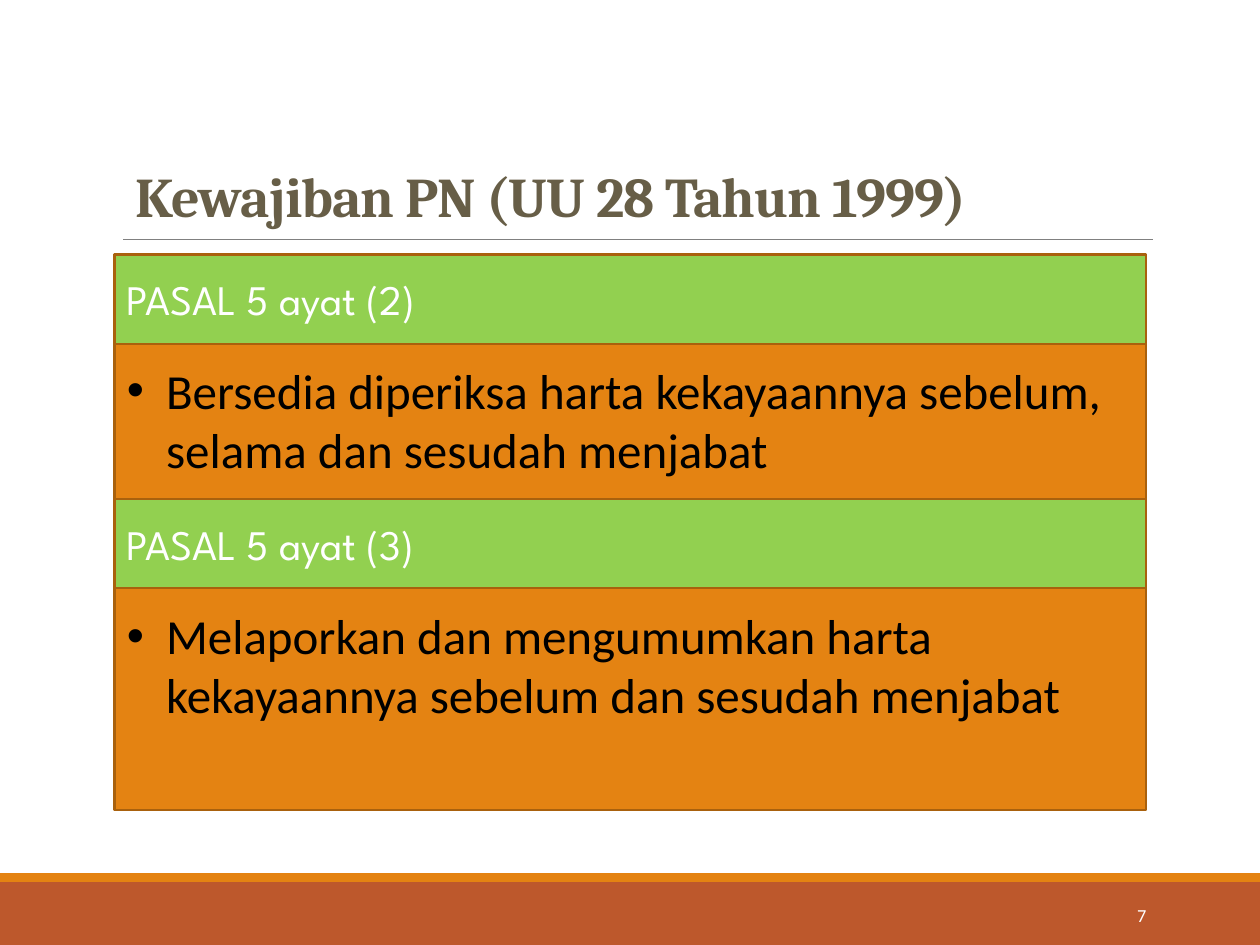
from lxml.etree import SubElement
from pptx import Presentation
from pptx.dml.color import RGBColor
from pptx.enum.shapes import MSO_CONNECTOR, MSO_SHAPE
from pptx.enum.text import MSO_ANCHOR, PP_ALIGN
from pptx.oxml.ns import qn
from pptx.util import Cm, Pt

LEFT, WIDE = 2.31, 20.8
GREEN, ORANGE, RUST, BROWN = "92D050", "E48312", "BD582C", "A9610D"
HEAD = {"name": "League Spartan", "size": Pt(24)}
BODY = {"name": "Calibri", "size": Pt(28)}
TITLE = {"name": "Cambria", "size": Pt(32), "bold": True}
PAGE = {"name": "Calibri", "size": Pt(10.5)}


def paint(item, tone):
    item.rgb = RGBColor.from_string(tone)


def apply(item, values):
    for name, value in values.items():
        setattr(item, name, value)


def add_bar(slide, box, tone, edge=None):
    bar = slide.shapes.add_shape(MSO_SHAPE.RECTANGLE, *map(Cm, box))
    bar.shadow.inherit = False
    bar.fill.solid()
    paint(bar.fill.fore_color, tone)
    if edge:
        paint(bar.line.color, edge)
        bar.line.width = Pt(1.25)
    else:
        bar.line.fill.background()
    return bar


def write(shape, text, font, tone, anchor=MSO_ANCHOR.MIDDLE, **layout):
    frame = shape.text_frame
    apply(frame, {"word_wrap": True, "vertical_anchor": anchor})
    para = frame.paragraphs[0]
    apply(para, {"alignment": PP_ALIGN.LEFT, **layout})
    run = para.add_run()
    run.text = text
    apply(run.font, font)
    paint(run.font.color, tone)
    return para, run


def add_text(slide, box, *args, **layout):
    return write(slide.shapes.add_textbox(*map(Cm, box)), *args, **layout)


def add_rule(slide, left, right, top):
    ends = map(Cm, (left, top, right, top))
    rule = slide.shapes.add_connector(MSO_CONNECTOR.STRAIGHT, *ends)
    paint(rule.line.color, "808080")
    rule.line.width = Pt(0.5)
    SubElement(rule._element.spPr, qn("a:effectLst"))


def add_head(slide, top, text):
    bar = add_bar(slide, (LEFT, top, WIDE, 1.8), GREEN, BROWN)
    write(bar, text, HEAD, "FFFFFF")


def add_point(slide, top, wide, high, text):
    box = (LEFT, top, wide, high)
    para, _ = add_text(slide, box, text, BODY, "000000", MSO_ANCHOR.TOP)
    props = para._p.get_or_add_pPr()
    props.set("marL", str(Cm(0.79)))
    props.set("indent", str(Cm(-0.79)))
    SubElement(props, qn("a:buFont")).set("typeface", "Arial")
    SubElement(props, qn("a:buChar")).set("char", "•")


def main():
    deck = Presentation()
    apply(deck, {"slide_width": Cm(25.4), "slide_height": Cm(19.05)})
    slide = deck.slides.add_slide(deck.slide_layouts[6])

    add_bar(slide, (0, 17.78, 25.4, 1.27), RUST)
    add_bar(slide, (0, 17.6, 25.4, 0.18), ORANGE)
    add_rule(slide, 2.48, 23.24, 4.82)
    add_text(slide, (20.62, 17.94, 2.74, 1.01), "7", PAGE, "FFFFFF",
             alignment=PP_ALIGN.RIGHT)
    _, run = add_text(slide, (2.48, 3.33, 20.95, 1.42),
                      "Kewajiban PN (UU 28 Tahun 1999)", TITLE, "675E47",
                      MSO_ANCHOR.BOTTOM, line_spacing=0.85)
    run._r.get_or_add_rPr().set("spc", "-50")

    add_head(slide, 5.13, "PASAL 5 ayat (2)")
    add_bar(slide, (LEFT, 6.93, WIDE, 9.4), ORANGE, BROWN)
    add_point(slide, 7.14, 20.6, 2.64,
              "Bersedia diperiksa harta kekayaannya sebelum, "
              "selama dan sesudah menjabat")
    add_head(slide, 10.06, "PASAL 5 ayat (3)")
    add_point(slide, 12.09, WIDE, 3.84,
              "Melaporkan dan mengumumkan harta kekayaannya "
              "sebelum dan sesudah menjabat")
    deck.save("out.pptx")


if __name__ == "__main__":
    main()
